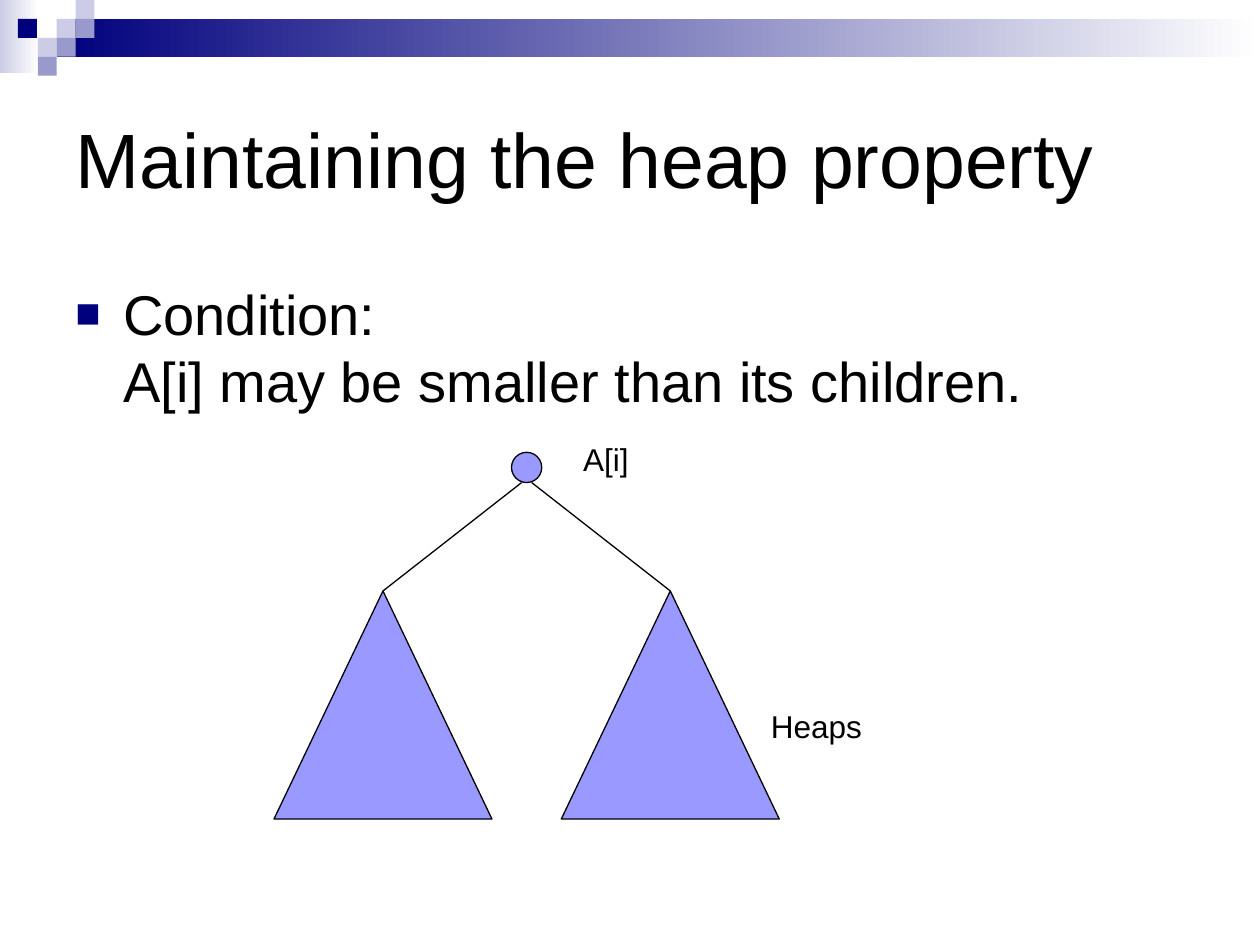
import pptx
import pptx.util
import pptx.dml.color
import pptx.enum.shapes
import pptx.enum.text
import pptx.oxml
import pptx.oxml.ns
from dataclasses import dataclass

Inches = pptx.util.Inches
Pt = pptx.util.Pt
Shape = pptx.enum.shapes.MSO_SHAPE
Anchor = pptx.enum.text.MSO_ANCHOR


@dataclass(frozen=True)
class Theme:
    font: str = "Arial"
    ink: str = "000000"
    navy: str = "00007D"
    mid: str = "9999CC"
    pale: str = "CCCCE6"
    white: str = "FFFFFF"
    node: str = "9999FF"
    title: int = 44
    body: int = 32
    label: int = 18
    line: float = 0.75


def rgb(code):
    return pptx.dml.color.RGBColor.from_string(code)


def assign(target, values):
    for name, value in values.items():
        setattr(target, name, value)


class Painter:
    def __init__(self, slide, theme):
        self.slide = slide
        self.theme = theme

    def shape(self, kind, box, fill, outline=False):
        """Draw a preset; a pair of fill colours makes a left-to-right fade."""
        item = self.slide.shapes.add_shape(kind, *map(Inches, box))
        item.shadow.inherit = False
        if isinstance(fill, tuple):
            item.fill.gradient()
            item.fill.gradient_angle = 0
            for stop, code in zip(item.fill.gradient_stops, fill):
                stop.color.rgb = rgb(code)
        else:
            item.fill.solid()
            item.fill.fore_color.rgb = rgb(fill)
        if outline:
            self.stroke(item.line)
        else:
            item.line.fill.background()

    def stroke(self, line):
        line.color.rgb = rgb(self.theme.ink)
        line.width = Pt(self.theme.line)

    def edge(self, start, end):
        points = map(Inches, (*start, *end))
        item = self.slide.shapes.add_connector(
            pptx.enum.shapes.MSO_CONNECTOR.STRAIGHT, *points)
        self.stroke(item.line)
        props = item._element.spPr
        props.append(pptx.oxml.parse_xml(
            f'<a:effectLst {pptx.oxml.ns.nsdecls("a")}/>'))

    def text(self, words, box, size, anchor=Anchor.TOP):
        frame = self.slide.shapes.add_textbox(*map(Inches, box)).text_frame
        assign(frame, {"word_wrap": True, "vertical_anchor": anchor})
        para = frame.paragraphs[0]
        para.text = words
        for run in para.runs:
            assign(run.font, {"name": self.theme.font, "size": Pt(size)})
            run.font.color.rgb = rgb(self.theme.ink)
        return para

    def bullet(self, words, box, size):
        para = self.text(words, box, size)
        props = para._p.get_or_add_pPr()
        indent = Inches(0.38)
        props.set("marL", str(indent))
        props.set("indent", str(-indent))
        space = pptx.oxml.ns.nsdecls("a")
        for part in (
            f'<a:spcBef {space}><a:spcPct val="20000"/></a:spcBef>',
            f'<a:buClr {space}><a:srgbClr val="{self.theme.navy}"/></a:buClr>',
            f'<a:buSzPct {space} val="75000"/>',
            f'<a:buFont {space} typeface="{self.theme.font}"/>',
            f'<a:buChar {space} char="■"/>',
        ):
            props.append(pptx.oxml.parse_xml(part))


def banner(draw):
    look = draw.theme
    draw.shape(Shape.RECTANGLE, (0, 0, 0.31, 0.58), (look.pale, look.white))
    draw.shape(Shape.RECTANGLE, (0.45, 0.15, 9.55, 0.3),
               (look.navy, look.white))
    cell = 0.15
    tiles = ((3, 1, look.pale), (4, 0, look.pale), (4, 1, look.mid),
             (2, 2, look.pale), (0.95, 1, look.navy), (3, 2, look.mid),
             (2, 3, look.mid))
    for col, row, fill in tiles:
        draw.shape(Shape.RECTANGLE, (col * cell, row * cell, cell, cell), fill)


def tree(draw):
    look = draw.theme
    center, top, size = 4.18, 3.59, 0.24
    width, height, peak = 1.73, 1.81, 4.69
    draw.shape(Shape.OVAL, (center - size / 2, top, size, size),
               look.node, True)
    for side in (-1, 1):
        apex = center + side * 1.14
        draw.shape(Shape.ISOSCELES_TRIANGLE,
                   (apex - width / 2, peak, width, height), look.node, True)
        draw.edge((center + side * 0.04, top + size), (apex, peak))
    draw.text("Heaps", (6.02, 5.56, 1.89, 0.4), look.label)
    draw.text("A[i]", (4.53, 3.44, 2.68, 0.4), look.label)


def main():
    deck = pptx.Presentation()
    assign(deck, {"slide_width": Inches(10), "slide_height": Inches(7.5)})
    look = Theme()
    draw = Painter(deck.slides.add_slide(deck.slide_layouts[6]), look)
    banner(draw)
    draw.text("Maintaining the heap property", (0.5, 0.5, 9, 1.5),
              look.title, Anchor.MIDDLE)
    draw.bullet("Condition:\vA[i] may be smaller than its children.",
                (0.5, 2.17, 9, 4.25), look.body)
    tree(draw)
    deck.save("out.pptx")


if __name__ == "__main__":
    main()
